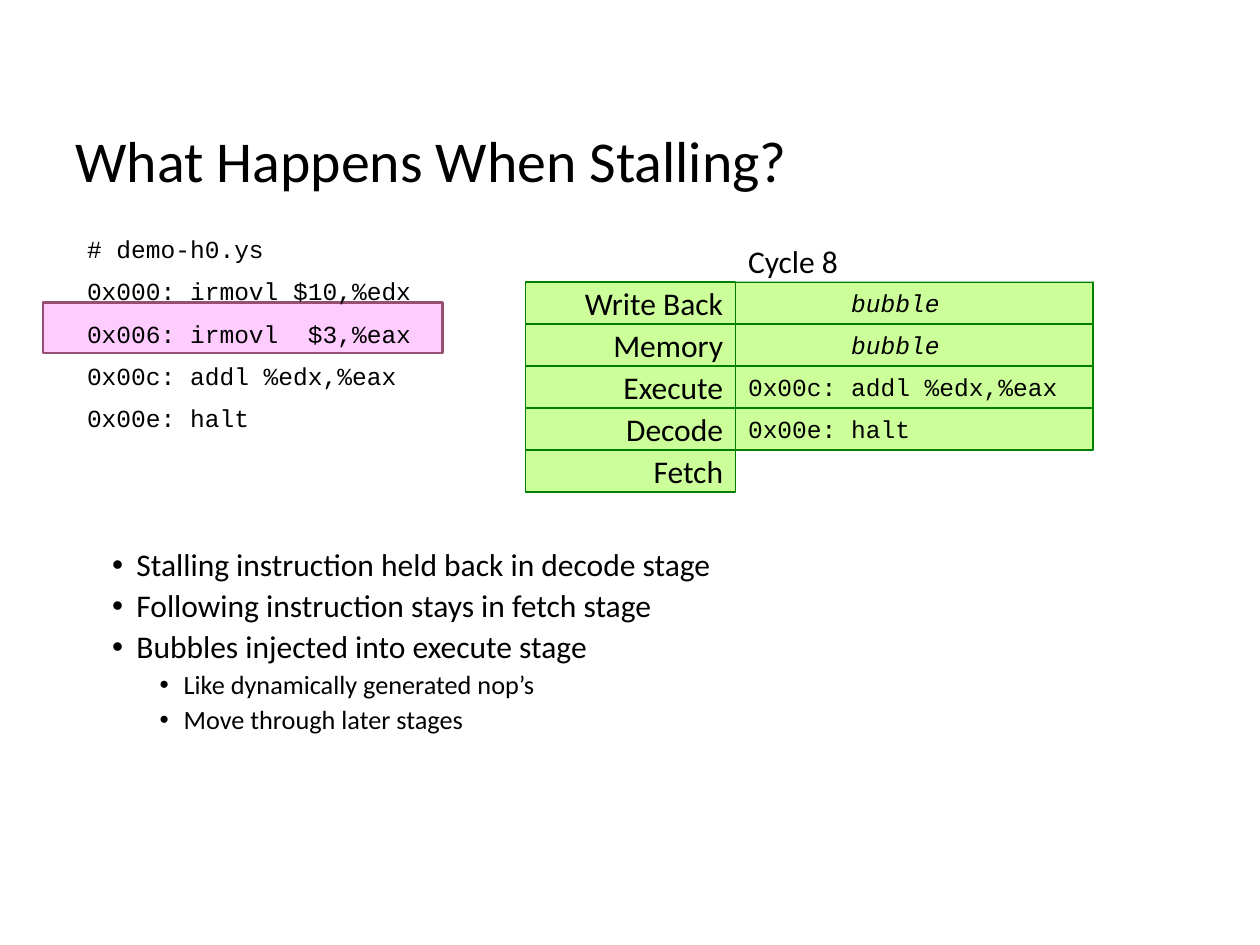
from lxml.etree import SubElement
from pptx import Presentation
from pptx.dml.color import RGBColor
from pptx.enum.shapes import MSO_SHAPE
from pptx.enum.text import MSO_ANCHOR, PP_ALIGN
from pptx.oxml.ns import qn
from pptx.util import Pt

PX = 7620  # EMU per px, 120 px to the inch
BLACK = RGBColor(0x00, 0x00, 0x00)
WHITE = RGBColor(0xFF, 0xFF, 0xFF)
PINK = RGBColor(0xFF, 0xCC, 0xFF)
PLUM = RGBColor(0x95, 0x4F, 0x72)
LIME = RGBColor(0xCC, 0xFF, 0x99)
GREEN = RGBColor(0x00, 0x80, 0x00)
SANS, MONO = "Calibri", "Courier New"
ROW = 40
INSET = 12

CODE = ["# demo-h0.ys", "0x000: irmovl $10,%edx", "0x006: irmovl  $3,%eax",
        "0x00c: addl %edx,%eax", "0x00e: halt"]
STAGES = [("Write Back", "bubble"), ("Memory", "bubble"),
          ("Execute", "0x00c: addl %edx,%eax"), ("Decode", "0x00e: halt"),
          ("Fetch", None)]
POINTS = [(1, "Stalling instruction held back in decode stage"),
          (1, "Following instruction stays in fetch stage"),
          (1, "Bubbles injected into execute stage"),
          (2, "Like dynamically generated nop’s"),
          (2, "Move through later stages")]


def style(para, size, font, italic=False):
    for span in para.runs:
        span.font.size = Pt(size)
        span.font.name = font
        span.font.italic = italic
        span.font.color.rgb = BLACK


def add_text(page, box, text, size, font):
    label = page.shapes.add_textbox(*(n * PX for n in box))
    frame = label.text_frame
    frame.word_wrap = True
    frame.vertical_anchor = MSO_ANCHOR.MIDDLE
    frame.text = text
    style(frame.paragraphs[0], size, font)
    return label


def add_rect(page, box, fill, line, width):
    rect = page.shapes.add_shape(MSO_SHAPE.RECTANGLE, *(n * PX for n in box))
    rect.shadow.inherit = False
    rect.fill.solid()
    rect.fill.fore_color.rgb = fill
    rect.line.color.rgb = line
    rect.line.width = Pt(width)
    return rect


def add_cell(page, box, text, size, font, align=PP_ALIGN.LEFT, italic=False, indent=0):
    frame = add_rect(page, box, LIME, GREEN, 1).text_frame
    frame.word_wrap = True
    frame.vertical_anchor = MSO_ANCHOR.MIDDLE
    frame.margin_left = (INSET + indent) * PX
    frame.text = text
    para = frame.paragraphs[0]
    para.alignment = align
    style(para, size, font, italic)


def add_title(page, box):
    title = add_text(page, box, "What Happens When Stalling?", 33, SANS)
    title.text_frame.paragraphs[0].line_spacing = 0.9


def add_code(page, box):
    left, top, width = box
    # Highlight behind the third line
    add_rect(page, (left - 30, top + 71, 380, 48), PINK, PLUM, 1.5)
    for i, text in enumerate(CODE):
        add_text(page, (left, top + i * ROW, width, ROW), text, 14, MONO)


def add_pipeline(page, box):
    left, top, width = box
    stage_width = 200
    middle, content_width = left + stage_width, width - stage_width
    for i, (stage, content) in enumerate(STAGES, 1):
        y = top + i * ROW
        add_cell(page, (left, y, stage_width, ROW), stage, 18, SANS, PP_ALIGN.RIGHT)
        if content:
            bubble = content == "bubble"
            # Bubbles line up with the instruction names
            add_cell(page, (middle, y, content_width, ROW), content, 14, MONO,
                     italic=bubble, indent=98 if bubble else 0)
    # Column heading
    heading = add_text(page, (middle, top, content_width, ROW), "Cycle 8", 18, SANS)
    heading.fill.solid()
    heading.fill.fore_color.rgb = WHITE


def add_points(page, box):
    frame = page.shapes.add_textbox(*(n * PX for n in box)).text_frame
    frame.word_wrap = True
    for i, (level, text) in enumerate(POINTS):
        para = frame.add_paragraph() if i else frame.paragraphs[0]
        para.text = text
        para.level = level
        para.line_spacing = 0.9
        para.space_before = Pt(3.8)
        style(para, 18 if level == 1 else 15, SANS)
        # Bullet and hanging indent
        props = para._p.get_or_add_pPr()
        props.set("marL", str((23 + 45 * level) * PX))
        props.set("indent", str(-23 * PX))
        SubElement(props, qn("a:buFont")).set("typeface", "Arial")
        SubElement(props, qn("a:buChar")).set("char", "•")


def main():
    deck = Presentation()
    deck.slide_width, deck.slide_height = 1199 * PX, 899 * PX
    page = deck.slides.add_slide(deck.slide_layouts[6])
    add_title(page, (60, 73, 1078, 166))
    add_points(page, (50, 517, 1088, 340))
    add_code(page, (71, 217, 340))
    add_pipeline(page, (500, 228, 540))
    deck.save("out.pptx")


if __name__ == "__main__":
    main()
